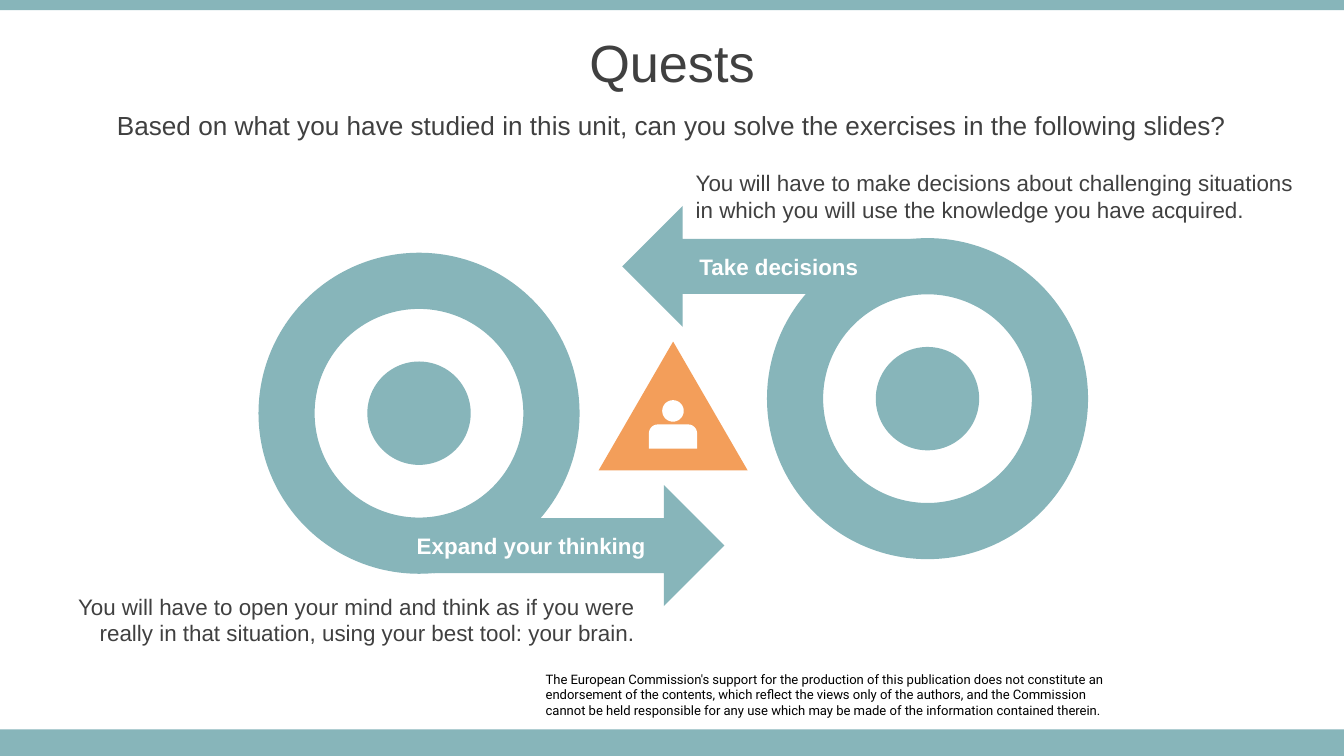
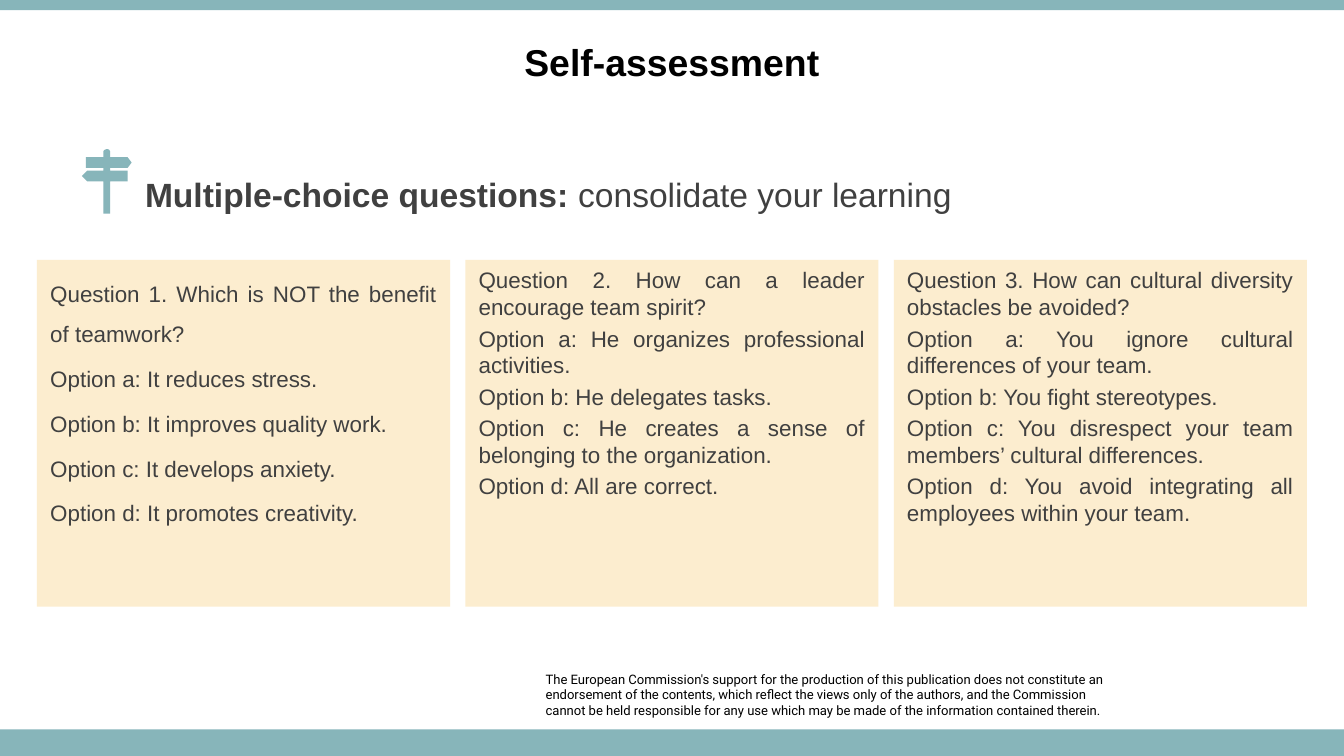
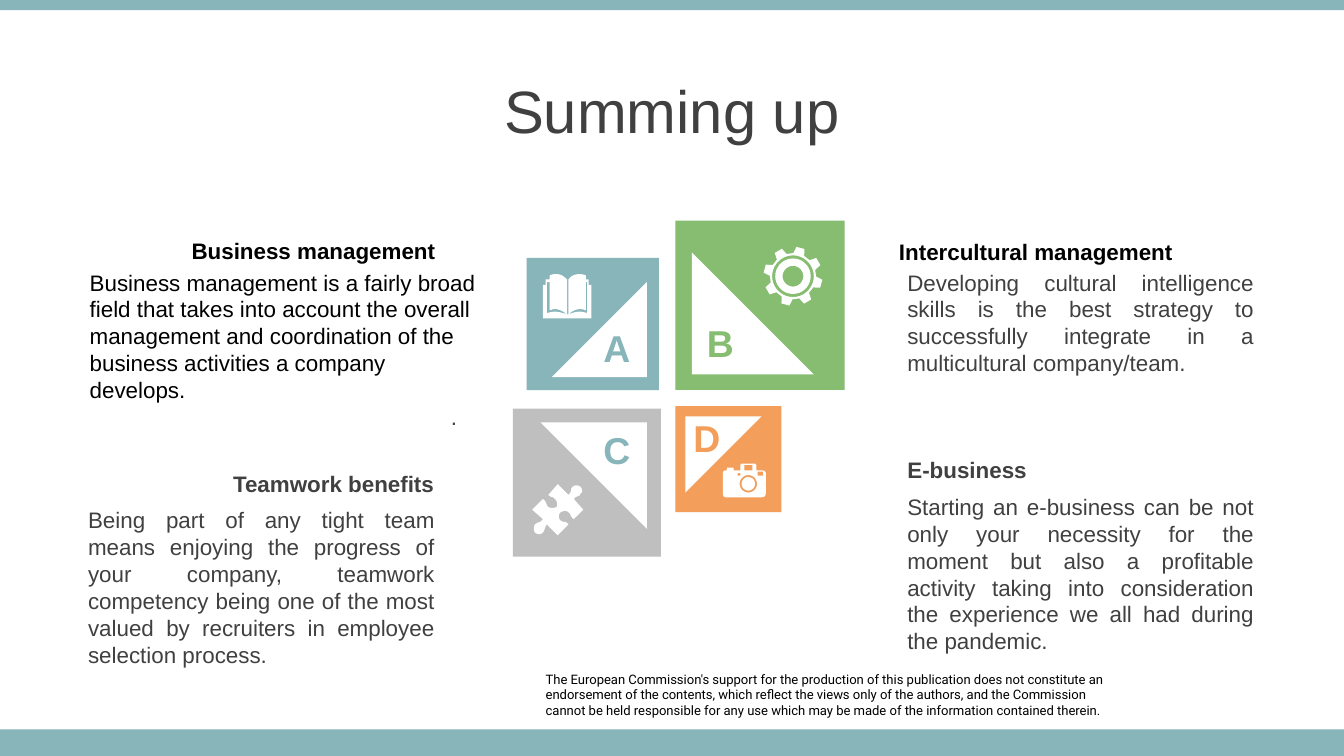
from math import cos, radians, sin

from pptx import Presentation
from pptx.dml.color import RGBColor
from pptx.enum.shapes import MSO_SHAPE
from pptx.enum.text import MSO_ANCHOR, MSO_AUTO_SIZE, PP_ALIGN
from pptx.util import Pt

LEFT, CENTER, RIGHT, JUSTIFY = PP_ALIGN.LEFT, PP_ALIGN.CENTER, PP_ALIGN.RIGHT, PP_ALIGN.JUSTIFY
TOP, MIDDLE = MSO_ANCHOR.TOP, MSO_ANCHOR.MIDDLE
GROW, FIXED = MSO_AUTO_SIZE.SHAPE_TO_FIT_TEXT, MSO_AUTO_SIZE.NONE
RECTANGLE, ELLIPSE, DONUT = MSO_SHAPE.RECTANGLE, MSO_SHAPE.OVAL, MSO_SHAPE.DONUT
ARROW, TRIANGLE = MSO_SHAPE.RIGHT_ARROW, MSO_SHAPE.ISOSCELES_TRIANGLE
RIGHT_TRIANGLE = MSO_SHAPE.RIGHT_TRIANGLE

WIDTH, HEIGHT = 720, 405
GRID = 0.72  # points per unit of the icon grid

COLORS = {
    "teal": "87B5BA",
    "orange": "F39E5A",
    "green": "86BD70",
    "gray": "BFBFBF",
    "cream": "FCEDCF",
    "white": "FFFFFF",
    "dark": "404040",
    "black": "000000",
}

DISCLAIMER = [
    "The European Commission's support for the production of this publication does not constitute an "
    "endorsement of the contents, which reflect the views only of the authors, and the Commission",
    "cannot be held responsible for any use which may be made of the information contained therein.",
]


def polar(center_x, center_y, radius, degrees):
    angle = radians(degrees)
    return center_x + radius * cos(angle), center_y + radius * sin(angle)


def circle(center_x, center_y, radius):
    return [polar(center_x, center_y, radius, degrees) for degrees in range(0, 360, 10)]


def box(left, top, right, bottom):
    return [(left, top), (right, top), (right, bottom), (left, bottom)]


def flatten(contour, steps=6):
    """Turn cubic curves, given as six numbers, into short straight steps."""
    points = []
    for item in contour:
        if len(item) == 2:
            points.append(item)
            continue
        x0, y0 = points[-1]
        x1, y1, x2, y2, x3, y3 = item
        for step in range(1, steps + 1):
            t = step / steps
            a, b, c, d = (1 - t) ** 3, 3 * t * (1 - t) ** 2, 3 * t * t * (1 - t), t ** 3
            points.append((a * x0 + b * x1 + c * x2 + d * x3, a * y0 + b * y1 + c * y2 + d * y3))
    return points


PERSON = [
    [(7, 18), (29, 18), (33, 18, 36, 21, 36, 25), (36, 36), (0, 36), (0, 25), (0, 21, 3, 18, 7, 18)],
    circle(18, 8, 8),
]
SIGNPOST = [[
    (19, 0), (20, 0, 21, 1, 21, 2), (21, 6), (34, 6), (37, 10), (34, 14), (21, 14), (21, 16),
    (34, 16), (34, 24), (21, 24), (21, 48), (16, 48), (16, 24), (4, 24), (0, 20), (4, 16),
    (16, 16), (16, 14), (3, 14), (3, 6), (16, 6), (16, 2), (16, 1, 17, 0, 19, 0),
]]
BOOK = [[
    (18, 30), (19, 30), (24, 28, 27, 27, 33, 29), (33, 6), (32, 6), (32, 27),
    (28, 25, 23, 26, 19, 30), (19, 4), (21, 1, 24, 0, 27, 0), (28, 0, 30, 0, 32, 1), (32, 4),
    (34, 4), (34, 8), (36, 8), (36, 33), (0, 33), (0, 8), (2, 8), (2, 4), (5, 4), (5, 1),
    (7, 0, 8, 0, 10, 0), (13, 0, 15, 1, 18, 4), (18, 30), (13, 26, 9, 25, 5, 27), (5, 6),
    (3, 6), (3, 29), (9, 27, 12, 28, 18, 30),
]]
PUZZLE = [[
    (36, 2), (37, 3, 38, 6, 36, 7), (35, 10, 33, 8, 31, 11), (38, 19), (31, 26),
    (28, 24, 29, 22, 27, 21), (25, 19, 23, 20, 21, 21), (20, 22, 19, 25, 21, 27),
    (24, 29, 25, 27, 27, 30), (19, 38), (11, 30), (9, 32, 10, 33, 8, 36), (6, 38, 3, 37, 2, 36),
    (1, 34, 1, 32, 2, 30), (4, 28, 6, 29, 8, 26), (0, 19), (8, 11), (11, 13, 10, 15, 12, 17),
    (14, 18, 16, 18, 18, 17), (19, 16, 19, 13, 17, 11), (15, 9, 14, 10, 12, 8), (19, 0), (27, 8),
    (30, 5, 28, 4, 30, 2), (32, 0, 35, 1, 36, 2),
]]
TOOTH = [(-14, 17.2), (-8, 22), (8, 22), (14, 17.2)]
GEAR = [
    [polar(21, 21.5, radius, middle + offset)
     for middle in range(15, 375, 45) for offset, radius in TOOTH],
    *[circle(21, 21.5, radius) for radius in (15.5, 13.2, 7.7)],
]
CAMERA = [
    [(14, 0), (24, 0), (25, 1), (25, 5), (29, 5), (31, 5, 32, 6, 32, 7), (32, 22),
     (32, 24, 31, 25, 29, 25), (2, 25), (1, 25, 0, 24, 0, 22), (0, 7), (0, 6, 1, 5, 2, 5),
     (3, 5), (3, 3), (8, 3), (8, 5), (13, 5), (13, 1), (14, 0)],
    box(16, 1, 22, 5), box(11, 7, 13, 9), box(26, 6, 30, 9),
    circle(19, 15, 6.5), circle(19, 15, 5),
]


class Deck:
    """Holds the shared style and the slide being filled."""

    def __init__(self):
        self.presentation = Presentation()
        self.presentation.slide_width = Pt(WIDTH)
        self.presentation.slide_height = Pt(HEIGHT)
        self.slide = None

    def new_slide(self, title, top=10.1, **style):
        self.slide = self.presentation.slides.add_slide(self.presentation.slide_layouts[6])
        footer = self.text(DISCLAIMER, 292.3, 359.5, 300, 25.2, size=7, color="black", font="Roboto")
        frame = footer.text_frame
        frame.margin_left = frame.margin_right = frame.margin_top = frame.margin_bottom = 0
        self.shape(RECTANGLE, 0, 390.8, WIDTH, 14.2, "teal")
        self.shape(RECTANGLE, 0, 0, WIDTH, 5.5, "teal")
        self.heading(title, 0, top, WIDTH, 45.4, align=CENTER, **style)

    def paint(self, shape, color):
        shape.shadow.inherit = False
        shape.fill.solid()
        shape.fill.fore_color.rgb = RGBColor.from_string(COLORS[color])
        shape.line.fill.background()

    def shape(self, kind, left, top, width, height, color, adjustments=(), rotation=0):
        shape = self.slide.shapes.add_shape(kind, Pt(left), Pt(top), Pt(width), Pt(height))
        for index, value in enumerate(adjustments):
            shape.adjustments[index] = value
        shape.rotation = rotation
        self.paint(shape, color)
        return shape

    def icon(self, contours, left, top, color="white"):
        start, *others = [
            [(Pt(left + x * GRID), Pt(top + y * GRID)) for x, y in flatten(contour)]
            for contour in contours
        ]
        builder = self.slide.shapes.build_freeform(*start[0])
        builder.add_line_segments(start[1:])
        for points in others:
            builder.move_to(*points[0])
            builder.add_line_segments(points[1:])
        self.paint(builder.convert_to_shape(), color)

    def format_run(self, run, size, color, bold=False, font="Arial"):
        run.font.name = font
        run.font.size = Pt(size)
        run.font.bold = bold
        run.font.color.rgb = RGBColor.from_string(COLORS[color])

    def fill_text(self, shape, lines, size=12, color="dark", bold=False, align=LEFT, font="Arial",
                  anchor=TOP, spacing=None, gap=0):
        frame = shape.text_frame
        frame.word_wrap = True
        frame.vertical_anchor = anchor
        frame.text = "\n".join(lines)
        for index, paragraph in enumerate(frame.paragraphs):
            paragraph.alignment = align
            if spacing:
                paragraph.line_spacing = spacing
            if gap and index:
                paragraph.space_before = Pt(gap)
            for run in paragraph.runs:
                self.format_run(run, size, color, bold, font)

    def text(self, lines, left, top, width, height, **style):
        text_box = self.slide.shapes.add_textbox(Pt(left), Pt(top), Pt(width), Pt(height))
        self.fill_text(text_box, lines, **style)
        text_box.text_frame.auto_size = GROW
        return text_box

    def heading(self, line, left, top, width, height, **style):
        text_box = self.text([line], left, top, width, height, anchor=MIDDLE, **style)
        text_box.text_frame.auto_size = FIXED
        return text_box

    def target(self, left, top, turned=False):
        """Ring with a centre dot and an arrow leaving it; turned is the half-turn of it."""
        ring, dot, arrow_width, arrow_height = 172, 55.4, 156.2, 64.8
        arrow_left, arrow_top = 93.4, 124.5
        if turned:
            arrow_left = ring - arrow_left - arrow_width
            arrow_top = ring - arrow_top - arrow_height
        inset = (ring - dot) / 2
        self.shape(DONUT, left, top, ring, ring, "teal", [0.175])
        self.shape(ARROW, left + arrow_left, top + arrow_top, arrow_width, arrow_height, "teal",
                   [0.455, 0.5], 180 if turned else 0)
        self.shape(ELLIPSE, left + inset, top + inset, dot, dot, "teal")


def add_quests(deck):
    deck.new_slide("Quests", size=28)
    deck.heading(
        "Based on what you have studied in this unit, can you solve the exercises in the following slides?",
        0, 55.5, WIDTH, 22.7, size=14, align=CENTER)
    deck.target(138.5, 135.4)
    deck.target(410.9, 127.6, turned=True)
    deck.shape(TRIANGLE, 320.7, 183, 79.8, 69, "orange")
    deck.icon(PERSON, 347.6, 214.4)
    deck.text(["You will have to make decisions about challenging situations "
               "in which you will use the knowledge you have acquired."], 365.6, 87, 340, 36.3)
    deck.text(["You will have to open your mind and think as if you were "
               "really in that situation, using your best tool: your brain."],
              30, 314, 317.3, 36.3, align=RIGHT)
    deck.text(["Expand your thinking"], 169, 281.8, 184, 21.8, color="white", bold=True, align=RIGHT)
    deck.text(["Take decisions"], 367.6, 132, 184, 21.8, color="white", bold=True)


def add_self_assessment(deck):
    deck.new_slide("Self-assessment", size=20, color="black", bold=True)
    heading = deck.heading("Multiple-choice questions: ", 70.6, 92.5, 481.7, 22.7, size=18, bold=True)
    ending = heading.text_frame.paragraphs[0].add_run()
    ending.text = "consolidate your learning"
    deck.format_run(ending, 18, "dark")
    deck.icon(SIGNPOST, 43.9, 79.9, "teal")

    questions = [
        (1.5, ["Question 1. Which is NOT the benefit of teamwork?",
               "Option a: It reduces stress.",
               "Option b: It improves quality work.",
               "Option c: It develops anxiety.",
               "Option d: It promotes creativity."]),
        (None, ["Question 2. How can a leader encourage team spirit?",
                "Option a: He organizes professional activities.",
                "Option b: He delegates tasks.",
                "Option c: He creates a sense of belonging to the organization.",
                "Option d: All are correct."]),
        (None, ["Question 3. How can cultural diversity obstacles be avoided?",
                "Option a: You ignore cultural differences of your team.",
                "Option b: You fight stereotypes.",
                "Option c: You disrespect your team members’ cultural differences.",
                "Option d: You avoid integrating all employees within your team."]),
    ]
    for column, (spacing, lines) in enumerate(questions):
        card = deck.shape(RECTANGLE, 19.8 + column * 229.5, 139.2, 221.3, 185.8, "cream")
        deck.fill_text(card, lines, align=JUSTIFY, spacing=spacing, gap=2.4)


def add_summing_up(deck):
    deck.new_slide("Summing up", top=36, size=32)
    tiles = [  # tile left, top, side, colour; triangle left, top, side, rotation
        (282.2, 138.2, 70.8, "teal", 295.7, 151.1, 50.9, 270),
        (361.8, 118.2, 90.7, "green", 370.7, 135.3, 65.3, 0),
        (361.8, 217.6, 56.8, "orange", 367.1, 223.1, 40.8, 90),
        (274.8, 219, 79.3, "gray", 289.5, 226.3, 57, 180),
    ]
    for left, top, side, color, corner_left, corner_top, corner, rotation in tiles:
        deck.shape(RECTANGLE, left, top, side, side, color)
        deck.shape(RIGHT_TRIANGLE, corner_left, corner_top, corner, corner, "white", rotation=rotation)

    letters = [("A", 314.6, 170.6, "teal"), ("B", 370.1, 167.8, "green"),
               ("C", 314.6, 225.4, "teal"), ("D", 362.9, 218.9, "orange")]
    for letter, left, top, color in letters:
        deck.text([letter], left, top, 31.7, 31.5, size=20, color=color, bold=True, align=CENTER)

    icons = [(BOOK, 290.9, 146.9), (PUZZLE, 285.1, 259.4), (GEAR, 409.7, 132.5), (CAMERA, 387.2, 248.4)]
    for contours, left, top in icons:
        deck.icon(contours, left, top)

    business = deck.text(
        ["Business management is a fairly broad field that takes into account the overall",
         "management and coordination of the", "business activities a company", "develops.", "."],
        41, 140.4, 221, 94.3, color="black", align=JUSTIFY)
    full_stop = business.text_frame.paragraphs[-1]
    full_stop.alignment = RIGHT
    full_stop._p.get_or_add_pPr().set("marR", str(Pt(10)))
    deck.format_run(full_stop.runs[0], 12, "dark")

    bodies = [
        (40.1, 267.8, 94.3,
         "Being part of any tight team means enjoying the progress of your company, teamwork "
         "competency being one of the most valued by recruiters in employee selection process."),
        (479, 140.4, 65.5,
         "Developing cultural intelligence skills is the best strategy to successfully integrate "
         "in a multicultural company/team."),
        (479, 260.6, 94.3,
         "Starting an e-business can be not only your necessity for the moment but also a profitable "
         "activity taking into consideration the experience we all had during the pandemic."),
    ]
    for left, top, height, body in bodies:
        deck.text([body], left, top, 200, height, align=JUSTIFY)

    names = [
        ("Business management", 40.8, 123.3, 21.8, "black", RIGHT),
        ("Teamwork benefits", 40.1, 248.5, 25.2, "dark", RIGHT),
        ("Intercultural management", 474.5, 123.8, 21.8, "black", LEFT),
        ("E-business", 479, 241, 25.2, "dark", LEFT),
    ]
    for name, left, top, height, color, align in names:
        deck.text([name], left, top, 199.6, height, color=color, bold=True, align=align)


def main():
    deck = Deck()
    add_quests(deck)
    add_self_assessment(deck)
    add_summing_up(deck)
    deck.presentation.save("out.pptx")


if __name__ == "__main__":
    main()
